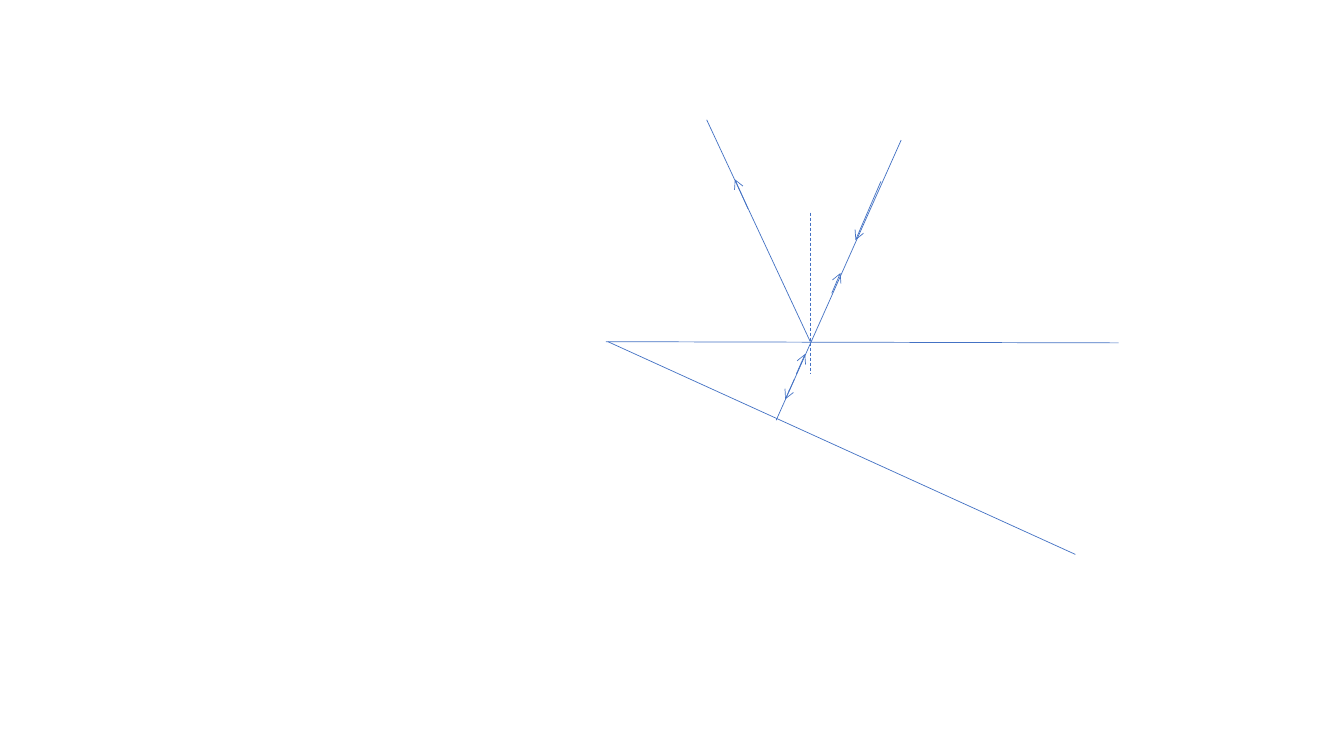
from pptx import Presentation
from pptx.dml.color import RGBColor
from pptx.enum.dml import MSO_LINE
from pptx.enum.shapes import MSO_CONNECTOR
from pptx.oxml.ns import qn
from pptx.util import Cm, Pt
from lxml.etree import SubElement

BLUE = RGBColor(0x44, 0x72, 0xC4)

presentation = Presentation()
presentation.slide_width = Cm(33.87)
presentation.slide_height = Cm(19.05)
slide = presentation.slides.add_slide(presentation.slide_layouts[6])
diagram = slide.shapes.add_group_shape()


def add_line(start_x, start_y, end_x, end_y):
    connector = diagram.shapes.add_connector(
        MSO_CONNECTOR.STRAIGHT, Cm(start_x), Cm(start_y), Cm(end_x), Cm(end_y)
    )
    connector.line.color.rgb = BLUE
    connector.line.width = Pt(0.5)
    SubElement(connector._element.spPr, qn("a:effectLst"))
    return connector


lower_mirror = (15.32, 8.61, 27.1, 13.97)
upper_surface = (15.27, 8.61, 28.19, 8.64)
incident_ray = (22.71, 3.53, 19.56, 10.59)
reflected_ray = (17.81, 3.02, 20.42, 8.61)
normal = (20.42, 5.36, 20.42, 9.42)

for ends in (lower_mirror, upper_surface, incident_ray):
    add_line(*ends)

add_line(*normal).line.dash_style = MSO_LINE.DASH
add_line(*reflected_ray)

ray_directions = [
    (22.2, 4.57, 21.56, 6.05),
    (20.02, 9.55, 19.79, 10.06),
    (20.07, 9.42, 20.29, 8.92),
    (20.96, 7.39, 21.18, 6.88),
    (18.85, 5.26, 18.52, 4.52),
]
for ends in ray_directions:
    arrow = add_line(*ends)
    SubElement(arrow.line._get_or_add_ln(), qn("a:tailEnd"), type="arrow")

presentation.save("out.pptx")
